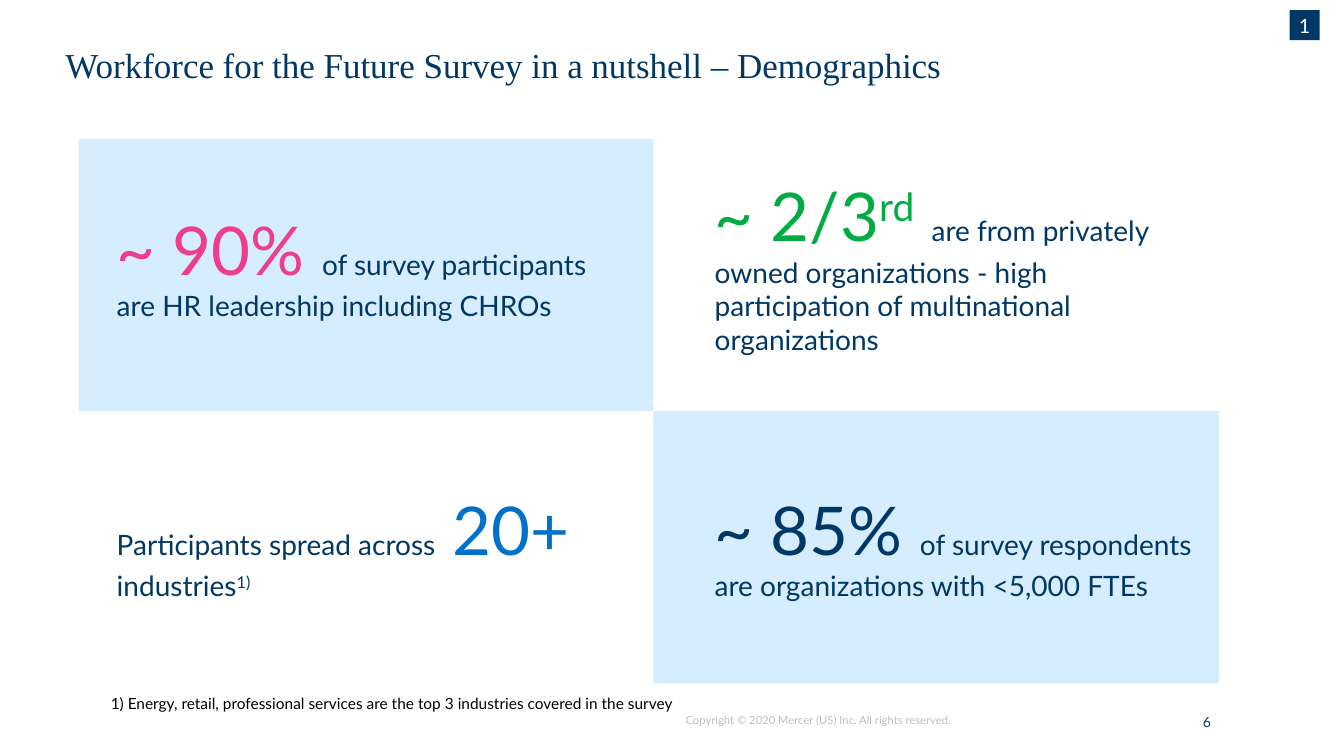
from pptx import Presentation
from pptx.dml.color import RGBColor
from pptx.enum.shapes import MSO_SHAPE
from pptx.enum.text import MSO_ANCHOR, PP_ALIGN
from pptx.util import Inches, Pt

COLORS = {
    "navy": "003865",
    "pale": "D6EDFF",
    "pink": "EE3D8B",
    "green": "00AC41",
    "blue": "0071CB",
    "gray": "B9BFC7",
    "black": "000000",
    "white": "FFFFFF",
}
BIG, BODY = 48, 20


class SlideBuilder:
    font_name = "Lato"

    def __init__(self, slide):
        self.slide = slide

    def color(self, name):
        return RGBColor.from_string(COLORS[name])

    def rectangle(self, left, top, width, height, fill):
        shape = self.slide.shapes.add_shape(
            MSO_SHAPE.RECTANGLE, Inches(left), Inches(top), Inches(width), Inches(height))
        shape.shadow.inherit = False
        shape.fill.solid()
        shape.fill.fore_color.rgb = self.color(fill)
        shape.line.fill.background()
        return shape

    def fill_text(self, shape, runs, inset=None, spacing=None, font_name=None, **frame_format):
        frame = shape.text_frame
        frame_values = {"word_wrap": True, "vertical_anchor": MSO_ANCHOR.TOP, **frame_format}
        if inset is not None:
            for side in ("left", "top", "right", "bottom"):
                frame_values[f"margin_{side}"] = Inches(inset)
        for name, value in frame_values.items():
            setattr(frame, name, value)
        paragraph = frame.paragraphs[0]
        if spacing:
            paragraph.line_spacing = spacing
        for text, size, color, *raised in runs:
            run = paragraph.add_run()
            run.text = text
            for name, value in {"name": font_name or self.font_name, "size": Pt(size)}.items():
                setattr(run.font, name, value)
            run.font.color.rgb = self.color(color)
            if raised:
                run._r.get_or_add_rPr().set("baseline", "30000")
        return paragraph

    def text(self, left, top, width, height, runs, **style):
        box = self.slide.shapes.add_textbox(
            Inches(left), Inches(top), Inches(width), Inches(height))
        return self.fill_text(box, runs, **style)

    def badge(self, left, top, side, label):
        shape = self.rectangle(left, top, side, side, "navy")
        paragraph = self.fill_text(shape, [(label, 14, "white")], inset=0,
                                   vertical_anchor=MSO_ANCHOR.MIDDLE)
        paragraph.alignment = PP_ALIGN.CENTER


FACTS = [
    [("~ 90% ", BIG, "pink"),
     ("of survey participants are HR leadership including CHROs", BODY, "navy")],
    [("~ 2/3", BIG, "green"), ("rd", BIG, "green", True), (" ", BIG, "green"),
     ("are from privately owned organizations - high participation of "
      "multinational organizations", BODY, "navy")],
    [("Participants spread across", BODY, "navy"), (" 20+ ", BIG, "blue"),
     ("industries", BODY, "navy"), ("1)", BODY, "navy", True)],
    [("~ 85% ", BIG, "navy"),
     ("of survey respondents are organizations with <5,000 FTEs", BODY, "navy")],
]


def main():
    presentation = Presentation()
    presentation.slide_width = Inches(13.33)
    presentation.slide_height = Inches(7.5)
    builder = SlideBuilder(presentation.slides.add_slide(presentation.slide_layouts[6]))

    builder.text(6.8, 7.08, 4.58, 0.3,
                 [("Copyright © 2020 Mercer (US) Inc. All rights reserved.", 8, "gray")],
                 inset=0, word_wrap=False)
    builder.rectangle(0.78, 1.38, 5.7, 2.7, "pale")
    builder.rectangle(6.48, 4.08, 5.61, 2.7, "pale")
    builder.text(0.65, 0.48, 12.03, 1.04,
                 [("Workforce for the Future Survey in a nutshell – Demographics", 25, "navy")],
                 inset=0, spacing=0.9, font_name="Times New Roman")
    builder.text(11.93, 7.08, 0.75, 0.3, [("6", 10, "navy")], inset=0)

    for index, runs in enumerate(FACTS):
        row, column = divmod(index, 2)
        builder.text(1.06 + 5.93 * column, 1.79 + 2.78 * row, 5.1, 1.68, runs,
                     vertical_anchor=MSO_ANCHOR.MIDDLE)

    builder.text(1, 6.83, 11.02, 0.3,
                 [("1) Energy, retail, professional services are the top 3 industries "
                   "covered in the survey", 11, "black")],
                 vertical_anchor=MSO_ANCHOR.MIDDLE)
    builder.badge(12.79, 0.1, 0.3, "1")
    presentation.save("out.pptx")


if __name__ == "__main__":
    main()
